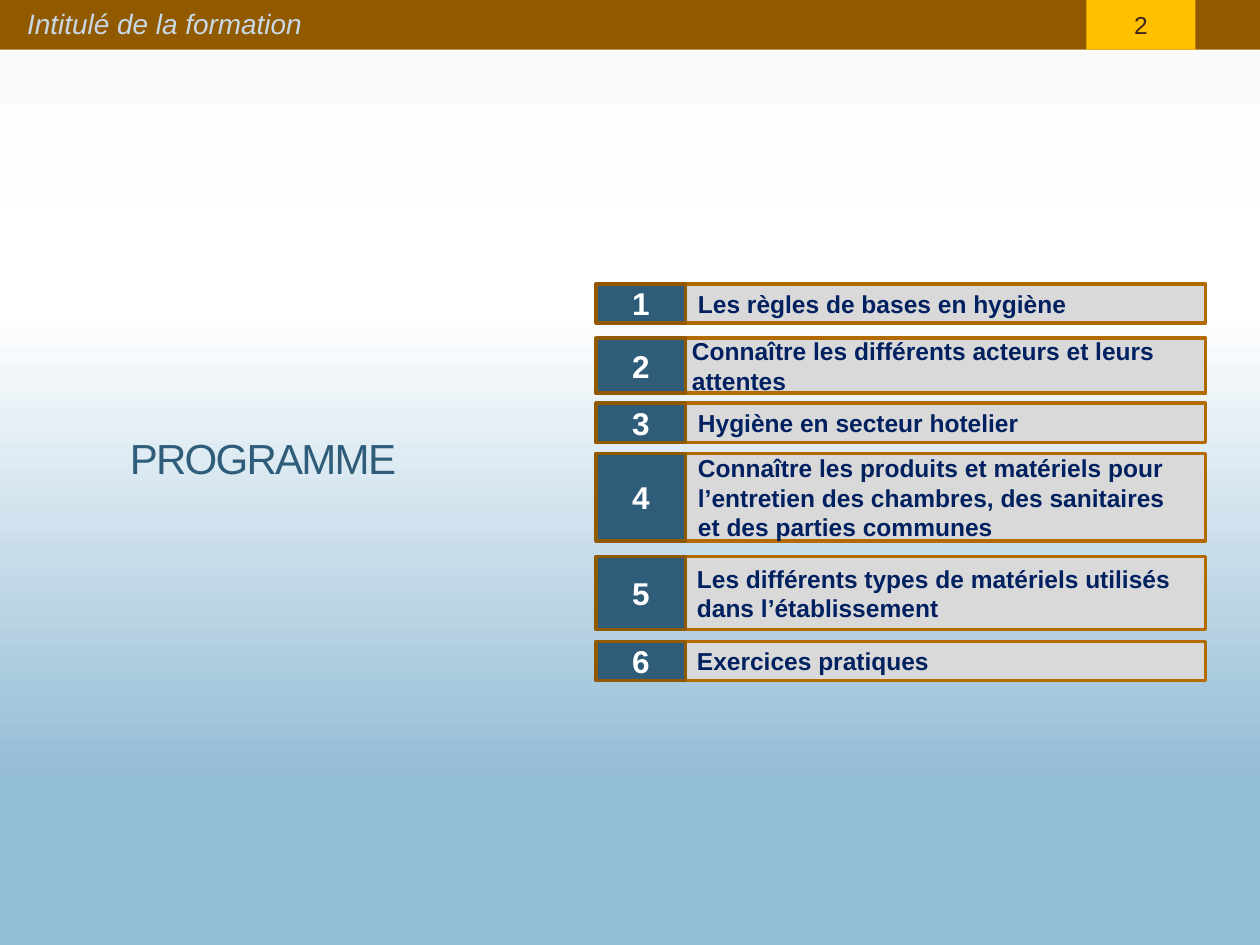
from lxml import etree
from pptx import Presentation
from pptx.dml.color import RGBColor
from pptx.enum.shapes import MSO_SHAPE
from pptx.enum.text import MSO_ANCHOR, PP_ALIGN
from pptx.oxml.ns import qn
from pptx.util import Cm, Pt

RECTANGLE = MSO_SHAPE.RECTANGLE
LEFT, CENTER = PP_ALIGN.LEFT, PP_ALIGN.CENTER
MIDDLE, BOTTOM = MSO_ANCHOR.MIDDLE, MSO_ANCHOR.BOTTOM

WHITE = RGBColor(0xFF, 0xFF, 0xFF)
BROWN = RGBColor(0x92, 0x5A, 0x00)
OCHRE = RGBColor(0xB3, 0x6B, 0x00)
YELLOW = RGBColor(0xFF, 0xC0, 0x00)
SLATE = RGBColor(0x2F, 0x5D, 0x79)
GREY = RGBColor(0xD9, 0xD9, 0xD9)
NAVY = RGBColor(0x00, 0x20, 0x60)
PALE_BLUE = RGBColor(0xC9, 0xD8, 0xE5)
DARK_BROWN = RGBColor(0x3C, 0x23, 0x1F)
NEAR_WHITE = RGBColor(0xFA, 0xFA, 0xFA)
SKY = RGBColor(0x93, 0xBC, 0xD5)

BACKGROUND_STOPS = [(0, NEAR_WHITE), (33, WHITE), (83, SKY), (100, SKY)]
WIDTH, HEIGHT = 25.4, 19.05
NUMBER_WIDTH = 1.8

# Text, top, height and left of the label, measured in cm from the list box
PROGRAMME = [
    ("Les règles de bases en hygiène", 0, 0.79, 1.8),
    ("Connaître les différents acteurs et leurs attentes", 1.1, 1.11, 1.68),
    ("Hygiène en secteur hotelier", 2.41, 0.79, 1.8),
    ("Connaître les produits et matériels pour l’entretien des chambres, "
     "des sanitaires et des parties communes", 3.42, 1.77, 1.8),
    ("Les différents types de matériels utilisés dans l’établissement",
     5.5, 1.47, 1.78),
    ("Exercices pratiques", 7.21, 0.79, 1.78),
]


def set_background(slide):
    fill = slide.background.fill
    fill.gradient()
    fill.gradient_angle = 270
    stop_list = next(slide.element.iter(qn("a:gsLst")))
    for stop in list(stop_list):
        stop_list.remove(stop)
    for percent, color in BACKGROUND_STOPS:
        stop = etree.SubElement(stop_list, qn("a:gs"), pos=str(percent * 1000))
        etree.SubElement(stop, qn("a:srgbClr"), val=str(color))


def write_text(shape, text, *, size, color, align=LEFT, anchor=MIDDLE,
               bold=False, italic=False, spacing=None):
    frame = shape.text_frame
    frame.word_wrap = True
    frame.vertical_anchor = anchor
    frame.margin_top = frame.margin_bottom = Cm(0.13 if anchor == BOTTOM else 0)
    paragraph = frame.paragraphs[0]
    paragraph.alignment = align
    run = paragraph.add_run()
    run.text = text
    font = run.font
    font.name, font.size = "Arial", Pt(size)
    font.bold, font.italic = bold, italic
    font.color.rgb = color
    if spacing is not None:
        run.font._element.set("spc", str(spacing * 100))


def add_box(shapes, left, top, width, height, fill, line=None):
    shape = shapes.add_shape(RECTANGLE, Cm(left), Cm(top), Cm(width), Cm(height))
    shape.shadow.inherit = False
    shape.fill.solid()
    shape.fill.fore_color.rgb = fill
    if line is None:
        shape.line.fill.background()
    else:
        shape.line.color.rgb = line
        shape.line.width = Pt(2.08)
    return shape


def add_header(slide, left, top, width, height):
    shapes = slide.shapes
    add_box(shapes, left, top + 0.41, width, 0.64, WHITE)
    add_box(shapes, left, top, width, height, BROWN)
    page_number = add_box(shapes, left + 21.9, top, 2.2, height, YELLOW)
    write_text(page_number, "2", size=14, color=DARK_BROWN, align=CENTER)
    course = shapes.add_textbox(Cm(left + 0.3), Cm(top + 0.03), Cm(20.8), Cm(0.9))
    write_text(course, "Intitulé de la formation", size=16, color=PALE_BLUE,
               italic=True)


def add_title(slide, left, top, width, height):
    title = slide.shapes.add_textbox(Cm(left), Cm(top), Cm(width), Cm(height))
    write_text(title, "PROGRAMME", size=24, color=SLATE, align=CENTER,
               anchor=BOTTOM, spacing=-1)


def add_programme(slide, left, top, width):
    for number, (text, offset, height, label_left) in enumerate(PROGRAMME, 1):
        shapes = slide.shapes.add_group_shape().shapes
        label = add_box(shapes, left + label_left, top + offset,
                        width - label_left, height, GREY, OCHRE)
        write_text(label, text, size=14, color=NAVY, bold=True)
        badge = add_box(shapes, left, top + offset, NUMBER_WIDTH, height,
                        SLATE, BROWN)
        write_text(badge, str(number), size=18, color=WHITE, align=CENTER,
                   bold=True)


def main():
    presentation = Presentation()
    presentation.slide_width, presentation.slide_height = Cm(WIDTH), Cm(HEIGHT)
    slide = presentation.slides.add_slide(presentation.slide_layouts[6])
    set_background(slide)
    add_header(slide, 0, 0, WIDTH, 1)
    add_title(slide, 0.9, 8.66, 8.8, 1.2)
    add_programme(slide, 12.02, 5.72, 12.28)
    presentation.save("out.pptx")


if __name__ == "__main__":
    main()
